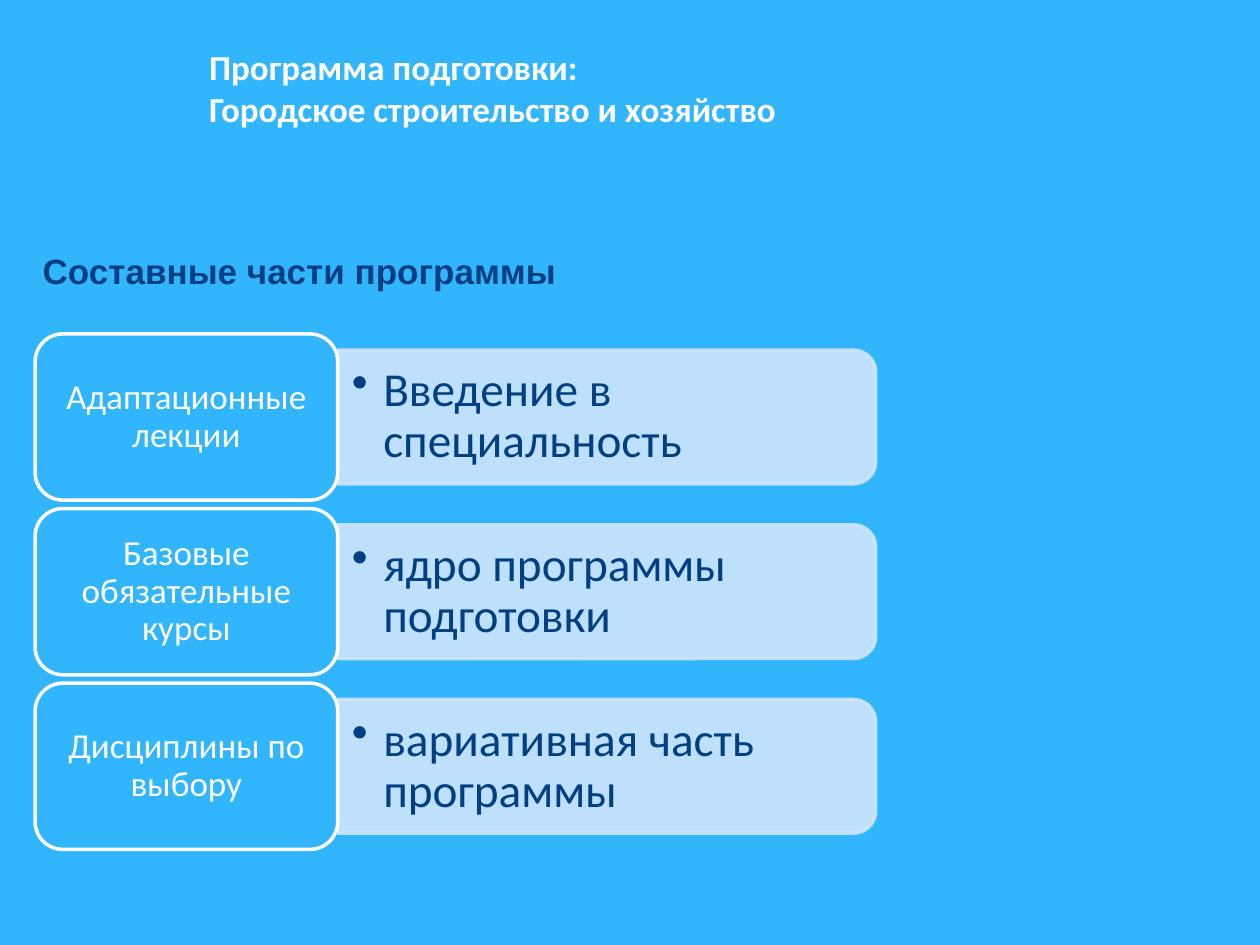
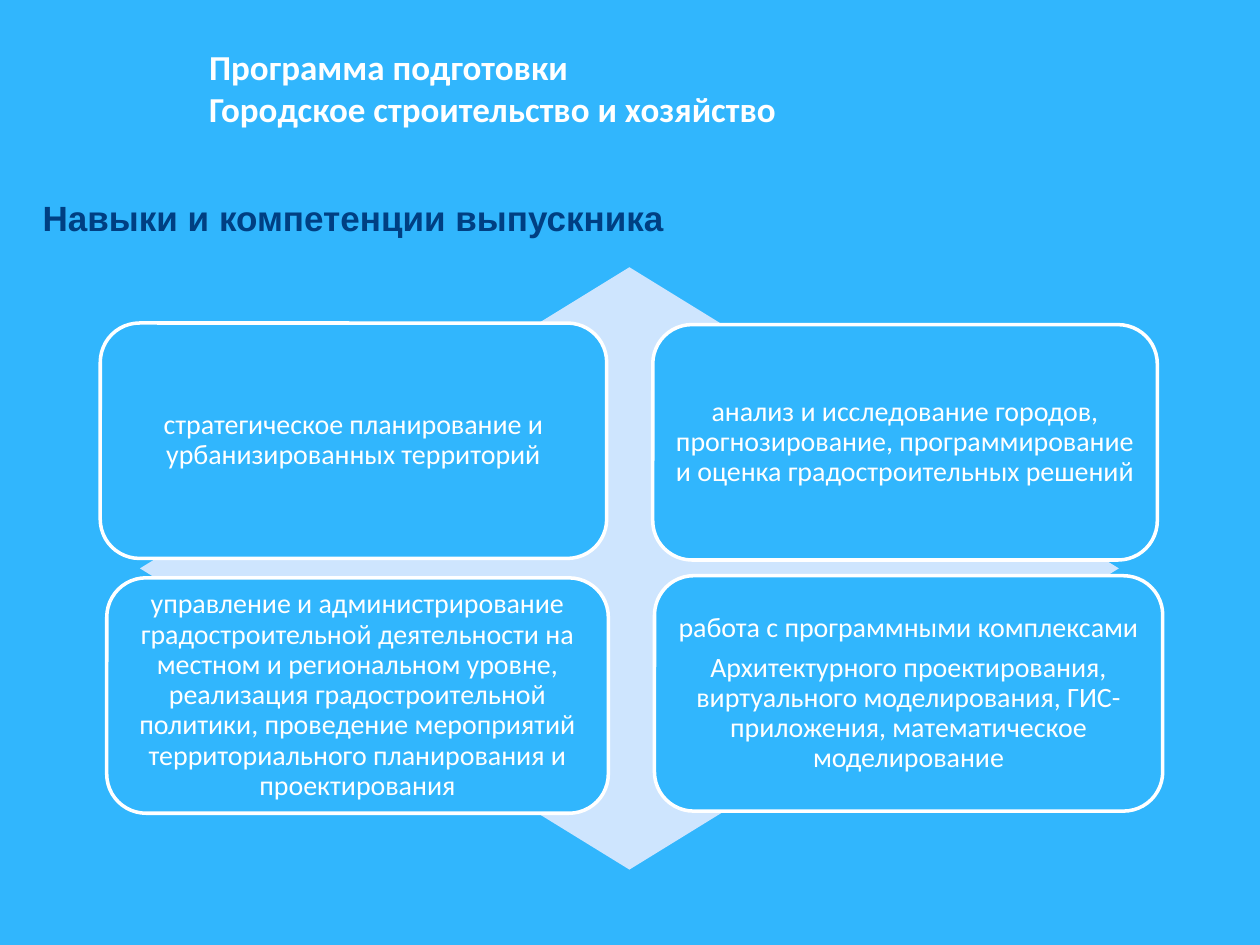
from pptx import Presentation
from pptx.dml.color import RGBColor
from pptx.enum.shapes import MSO_SHAPE
from pptx.enum.text import MSO_ANCHOR, MSO_AUTO_SIZE, PP_ALIGN
from pptx.oxml.ns import qn
from pptx.util import Pt
from lxml.etree import SubElement

SKY, ICE, NAVY, WHITE = "31B6FD", "CEE5FE", "003F82", "FFFFFF"


def paint(color, value, alpha=None):
    color.rgb = RGBColor.from_string(value)
    if alpha:
        node = color._xFill.find(qn("a:srgbClr"))
        SubElement(node, qn("a:alpha"), val=str(alpha * 1000))


def write(frame, *lines, size=20, font="Calibri", color=WHITE, bold=False,
          align=PP_ALIGN.LEFT, anchor=MSO_ANCHOR.MIDDLE, pad=(7.2, 3.6),
          space=1.0, after=0, bullet=None):
    frame.word_wrap = True
    frame.auto_size = MSO_AUTO_SIZE.NONE
    frame.vertical_anchor = anchor
    frame.margin_left = frame.margin_right = Pt(pad[0])
    frame.margin_top = frame.margin_bottom = Pt(pad[1])
    for i, line in enumerate(lines):
        para = frame.add_paragraph() if i else frame.paragraphs[0]
        para.alignment = align
        para.line_spacing = space
        para.space_after = Pt(after)
        if bullet:
            props = para._p.get_or_add_pPr()
            props.set("marL", str(Pt(18)))
            props.set("indent", str(-Pt(18)))
            SubElement(props, qn("a:buChar"), char=bullet)
        run = para.add_run()
        run.text = line
        run.font.size = Pt(size)
        run.font.name = font
        run.font.bold = bold
        paint(run.font.color, color)


class Deck:
    def __init__(self):
        self.show = Presentation()
        self.show.slide_width, self.show.slide_height = Pt(720), Pt(540)
        fill = self.show.slide_master.background.fill
        fill.solid()
        paint(fill.fore_color, SKY)

    def page(self, *title):
        self.slide = self.show.slides.add_slide(self.show.slide_layouts[5])
        head = self.slide.shapes.title
        head.left, head.top, head.width, head.height = map(Pt, (112.3, 33.8, 584.6, 32.4))
        write(head.text_frame, *title, bold=True)

    def shape(self, kind, x, y, w, h, fill=SKY, line=None, alpha=None):
        item = self.slide.shapes.add_shape(kind, *map(Pt, (x, y, w, h)))
        item.shadow.inherit = False
        item.fill.solid()
        paint(item.fill.fore_color, fill, alpha)
        if line:
            item.line.width = Pt(2)
            item.line.fill.solid()
            paint(item.line.fill.fore_color, line, alpha)
        else:
            item.line.fill.background()
        return item

    def text(self, x, y, w, h, *lines, **style):
        box = self.slide.shapes.add_textbox(*map(Pt, (x, y, w, h)))
        write(box.text_frame, *lines, **style)

    def topic(self, y, line):
        self.text(17.3, y, 555, 31.7, line, font="Arial", color=NAVY,
                  bold=True, anchor=MSO_ANCHOR.TOP)

    def card(self, x, y, w, h, *lines, size, pad):
        item = self.shape(MSO_SHAPE.ROUNDED_RECTANGLE, x, y, w, h, line=WHITE)
        write(item.text_frame, *lines, size=size, pad=pad, space=0.9,
              after=size * 0.35, align=PP_ALIGN.CENTER)

    def band(self, x, y, w, h, line):
        item = self.shape(MSO_SHAPE.ROUND_2_SAME_RECTANGLE, x + (w - h) / 2,
                          y + (h - w) / 2, h, w, fill=ICE, line=ICE, alpha=90)
        item.rotation = 90
        self.text(x, y + 4, w - 4, h - 8, line, size=27, color=NAVY,
                  pad=(8, 4), space=0.9, after=4, bullet="•")


def parts(deck):
    deck.page("Программа подготовки:", "Городское строительство и хозяйство")
    deck.topic(139, "Составные части программы")
    rows = [
        ("Адаптационные лекции", "Введение в специальность"),
        ("Базовые обязательные курсы", "ядро программы подготовки"),
        ("Дисциплины по выбору", "вариативная часть программы"),
    ]
    for i, (name, note) in enumerate(rows):
        top = 190.8 + i * 99.8
        deck.band(193, top + 9.3, 307.4, 76.4, note)
        deck.card(20.1, top, 172.9, 95, name, size=20, pad=(6, 3))


def skills(deck):
    deck.page("Программа подготовки", "Городское строительство и хозяйство")
    deck.topic(108.7, "Навыки и компетенции выпускника")
    deck.shape(MSO_SHAPE.DIAMOND, 80, 152.7, 559.4, 344.2, fill=ICE)
    cards = [
        (57.3, 184.6, 289.4, ["стратегическое планирование и урбанизированных территорий"]),
        (373, 185.5, 288.3, ["анализ и исследование городов, прогнозирование, "
                             "программирование и оценка градостроительных решений"]),
        (61, 330.2, 286.6, ["управление и администрирование градостроительной деятельности "
                            "на местном и региональном уровне, реализация градостроительной "
                            "политики, проведение мероприятий территориального планирования "
                            "и проектирования"]),
        (374, 329, 290.4, ["работа с программными комплексами",
                           "Архитектурного проектирования, виртуального моделирования, "
                           "ГИС-приложения, математическое моделирование"]),
    ]
    for x, y, w, lines in cards:
        deck.card(x, y, w, 134.5, *lines, size=16, pad=(5, 5))


def main():
    deck = Deck()
    parts(deck)
    skills(deck)
    deck.show.save("out.pptx")


if __name__ == "__main__":
    main()
